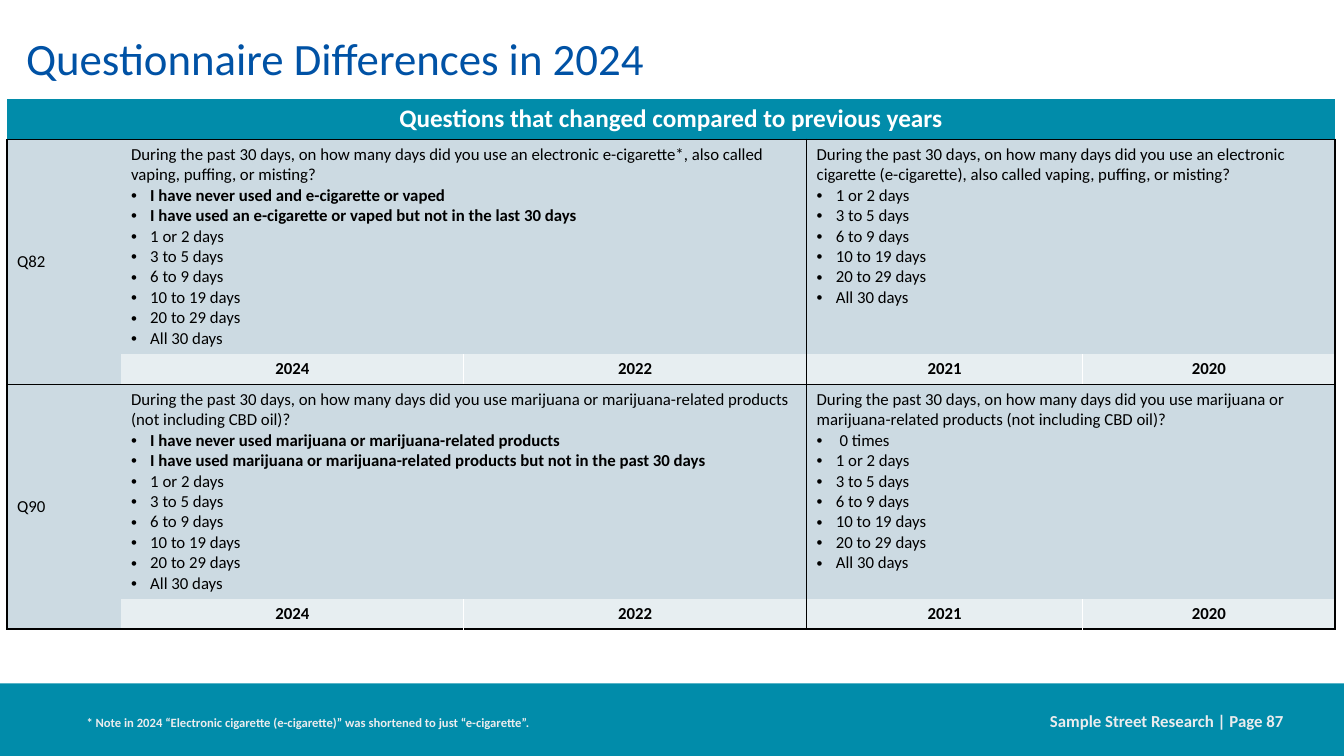
from lxml.etree import SubElement
from pptx import Presentation
from pptx.dml.color import RGBColor
from pptx.enum.shapes import MSO_SHAPE
from pptx.enum.text import MSO_ANCHOR, PP_ALIGN
from pptx.oxml.ns import qn
from pptx.util import Inches, Pt

TEAL = RGBColor(0x01, 0x8C, 0xAA)
BLUE = RGBColor(0x00, 0x52, 0xA5)
PALE = RGBColor(0xCC, 0xDA, 0xE2)
LIGHT = RGBColor(0xE7, 0xEE, 0xF1)
GREY = RGBColor(0xEB, 0xEC, 0xEE)
BLACK = RGBColor(0, 0, 0)
WHITE = RGBColor(255, 255, 255)

DAYS = ["1 or 2 days", "3 to 5 days", "6 to 9 days",
        "10 to 19 days", "20 to 29 days", "All 30 days"]
YEARS = ["2024", "2022", "2021", "2020"]
VAPE = "During the past 30 days, on how many days did you use an electronic "
ALSO = ", also called vaping, puffing, or misting?"
WEED = ("During the past 30 days, on how many days did you use marijuana or "
        "marijuana-related products (not including CBD oil)?")

# label, (new question, bold answers), (old question, extra answers)
ITEMS = [
    ("Q82",
     (VAPE + "e-cigarette*" + ALSO,
      ["I have never used and e-cigarette or vaped",
       "I have used an e-cigarette or vaped but not in the last 30 days"]),
     (VAPE + "cigarette (e-cigarette)" + ALSO, [])),
    ("Q90",
     (WEED,
      ["I have never used marijuana or marijuana-related products",
       "I have used marijuana or marijuana-related products "
       "but not in the past 30 days"]),
     (WEED, [" 0 times"])),
]


def style(para, size, color, bold=False, align=PP_ALIGN.LEFT):
    para.alignment = align
    font = para.font
    for run in para.runs:
        font = run.font
        font.name = "Calibri"
        font.size = Pt(size)
        font.bold = bold
        font.color.rgb = color


def paint(cell, fill, edges):
    """Fill a cell and draw its left, right, top and bottom edges."""
    props = cell._tc.get_or_add_tcPr()
    for side, color in zip("LRTB", edges):
        line = SubElement(props, qn("a:ln" + side), w=str(Pt(1)))
        if color is None:
            SubElement(line, qn("a:noFill"))
        else:
            solid = SubElement(line, qn("a:solidFill"))
            SubElement(solid, qn("a:srgbClr"), val=str(color))
    cell.fill.solid()
    cell.fill.fore_color.rgb = fill


prs = Presentation()
prs.slide_width = Inches(13.33)
prs.slide_height = Inches(7.5)
slide = prs.slides.add_slide(prs.slide_layouts[6])

# Footer band
band = slide.shapes.add_shape(MSO_SHAPE.RECTANGLE, 0, Inches(6.78),
                              Inches(13.33), Inches(0.72))
band.shadow.inherit = False
band.fill.solid()
band.fill.fore_color.rgb = TEAL
band.line.fill.background()

# Title and footer texts
texts = [
    ("Questionnaire Differences in 2024", (0.16, 0.24, 12.98, 0.66),
     32, BLUE, False, PP_ALIGN.LEFT),
    ("* Note in 2024 “Electronic cigarette (e-cigarette)” was shortened to "
     "just “e-cigarette”.", (0.76, 6.81, 9.19, 0.71),
     9, GREY, True, PP_ALIGN.LEFT),
    ("Sample Street Research | Page 87", (10.01, 6.95, 2.82, 0.4),
     12, GREY, True, PP_ALIGN.RIGHT),
]
for text, place, size, color, bold, align in texts:
    box = slide.shapes.add_textbox(*[Inches(n) for n in place])
    frame = box.text_frame
    frame.word_wrap = True
    frame.vertical_anchor = MSO_ANCHOR.MIDDLE
    frame.text = text
    style(frame.paragraphs[0], size, color, bold, align)

# Table grid
widths = [1.13, 3.4, 3.4, 2.74, 2.5]
heights = [0.4, 2.13, 0.3, 2.13, 0.3]
table = slide.shapes.add_table(5, 5, Inches(0.07), Inches(0.98),
                               Inches(sum(widths)),
                               Inches(sum(heights))).table
table.horz_banding = False
for col, width in zip(table.columns, widths):
    col.width = Inches(width)
for row, height in zip(table.rows, heights):
    row.height = Inches(height)

for r in range(5):
    for c in range(5):
        cell = table.cell(r, c)
        if r == 0:
            paint(cell, TEAL, (None, None, None, BLACK))
            continue
        inner = WHITE if r % 2 == 0 else BLACK
        left = [BLACK, None, inner, BLACK, inner][c]
        right = [None, inner, BLACK, inner, BLACK][c]
        top = BLACK if r % 2 else None
        bottom = BLACK if r % 2 == 0 or c == 0 else None
        fill = PALE if r % 2 or c == 0 else LIGHT
        paint(cell, fill, (left, right, top, bottom))

# Table contents
head = table.cell(0, 0)
head.merge(table.cell(0, 4))
head.text_frame.text = "Questions that changed compared to previous years"
style(head.text_frame.paragraphs[0], 18, WHITE, True, PP_ALIGN.CENTER)

for i, (label, new, old) in enumerate(ITEMS):
    r = 1 + 2 * i
    name = table.cell(r, 0)
    name.merge(table.cell(r + 1, 0))
    name.vertical_anchor = MSO_ANCHOR.MIDDLE
    name.text_frame.text = label
    style(name.text_frame.paragraphs[0], 12, BLACK)

    for c, (ask, extra) in ((1, new), (3, old)):
        cell = table.cell(r, c)
        cell.merge(table.cell(r, c + 1))
        frame = cell.text_frame
        frame.text = ask
        style(frame.paragraphs[0], 12, BLACK)
        for answer in extra + DAYS:
            para = frame.add_paragraph()
            props = para._p.get_or_add_pPr()
            props.set("marL", str(Inches(0.19)))
            props.set("indent", str(Inches(-0.19)))
            SubElement(props, qn("a:buFont"), typeface="Arial")
            SubElement(props, qn("a:buChar"), char="•")
            para.text = answer
            style(para, 12, BLACK, c == 1 and answer in extra)

    for c, year in enumerate(YEARS, 1):
        frame = table.cell(r + 1, c).text_frame
        frame.text = year
        style(frame.paragraphs[0], 12, BLACK, True, PP_ALIGN.CENTER)

prs.save("out.pptx")
